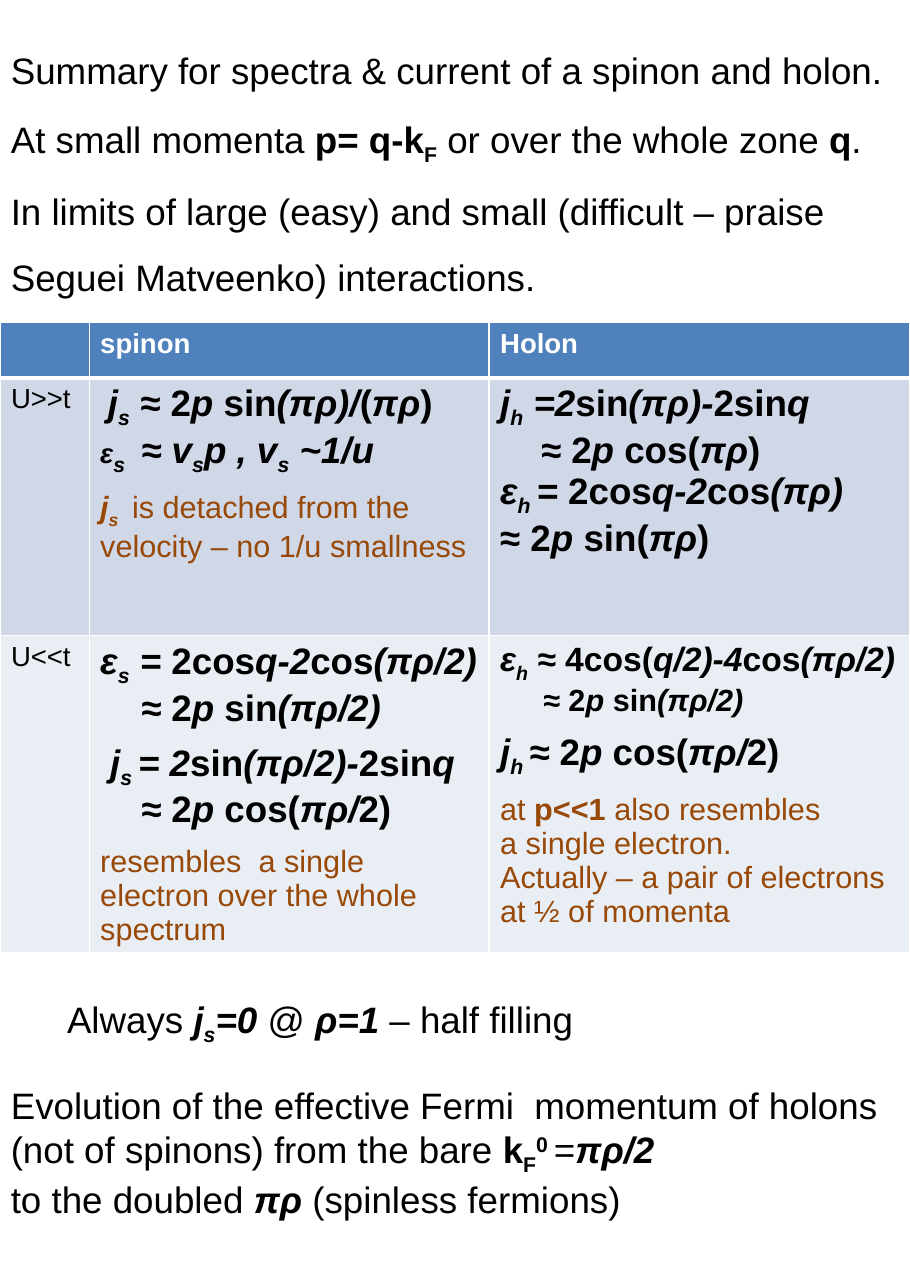
from dataclasses import dataclass

from lxml import etree
from pptx import Presentation
from pptx.dml.color import RGBColor
from pptx.enum.text import MSO_AUTO_SIZE
from pptx.oxml.ns import qn
from pptx.util import Inches, Pt

GROW = MSO_AUTO_SIZE.SHAPE_TO_FIT_TEXT
FONT = "Arial"
BLACK, WHITE, BROWN = "000000", "FFFFFF", "984807"
HEADER_FILL, BAND_FILLS = "4F81BD", ("D0D8E8", "E9EDF4")
PAGE_WIDTH, PAGE_HEIGHT = 8.26, 11.69
COLUMN_WIDTHS = (0.81, 3.63, 3.82)
ROW_HEIGHTS = (0.5, 2.34, 2.86)
BASELINES = {"{": "-25000", "}": "0", "[": "30000", "]": "0"}


@dataclass
class Line:
    """A paragraph: * toggles bold, | italic, {} is subscript, [] superscript."""
    text: str
    size: float = 24
    color: str = BLACK
    indent: float = 0
    before: float = 0
    spacing: float = 1
    first_size: float | None = None


@dataclass
class Box:
    """A text box with its place in inches."""
    left: float
    top: float
    width: float
    height: float
    lines: list[Line]
    wrap: bool = True


def label(text: str, color: str = BLACK) -> list[Line]:
    """Return a table heading."""
    return [Line(text, 18, color)]


TABLE_ROWS = [
    [[], label("*spinon", WHITE), label("*Holon", WHITE)],
    [
        label("U>>t"),
        [
            Line("*|j{s} ≈| 2|p| sin|(πρ)/|(|πρ|)", indent=0.07),
            Line("*|ε{s } ≈ v{s}p , v{s} ~1/u", first_size=18),
            Line("*|j{s }*| is detached from the velocity – no 1/u smallness", 20, BROWN, before=9),
        ],
        [
            Line("*|j{h} =2|sin|(πρ)-|2sin|q"),
            Line("*|≈| 2|p |cos(|πρ|)", indent=0.37),
            Line("*|ε{h }=| 2cos|q-2|cos|(πρ)"),
            Line("*≈ 2|p |sin(|πρ|)"),
        ],
    ],
    [
        label("U<<t"),
        [
            Line("*|ε{s} =| 2cos|q-2|cos|(πρ/2)"),
            Line("*|≈| 2|p| sin|(πρ/2)", indent=0.37),
            Line("*|j{s }= 2|sin|(πρ/2)-|2sin|q", indent=0.09, before=9),
            Line("*|≈| 2|p |cos(|πρ/|2)", indent=0.37),
            Line("resembles  a single electron over the whole spectrum", 20, BROWN, before=9),
        ],
        [
            Line("*|ε{h} ≈| 4cos(|q/2)-4|cos|(πρ/2)", 22),
            Line("*|≈| 2|p| sin|(πρ/2)", 20, indent=0.39),
            Line("*|j{h }≈| 2|p |cos(|πρ/|2)", before=9),
            Line("at *p<<1 *also resembles\na single electron.\n"
                 "Actually – a pair of electrons at ½ of momenta", 20, BROWN, before=9),
        ],
    ],
]

BOXES = [
    Box(0.51, 9, 4.95, 0.5, [Line("Always *|j{s}=0*| @ *|ρ=1 *|– half filling")], wrap=False),
    Box(0, 0.18, PAGE_WIDTH, 2.52, [
        Line("Summary for spectra & current of a spinon and holon.", spacing=1.5),
        Line("At small momenta *p= q-k{F}* or over the whole zone *q*.", spacing=1.5),
        Line("In limits of large (easy) and small (difficult – praise "
             "Seguei Matveenko) interactions.", spacing=1.5),
    ]),
    Box(0, 9.78, PAGE_WIDTH, 1.31, [
        Line("Evolution of the effective Fermi  momentum of holons (not of spinons) "
             "from the bare *k{F}[0 ]*=*|πρ/2\n*|to the doubled *|πρ *|(spinless fermions)"),
    ]),
]


def rgb(color: str) -> RGBColor:
    """Turn a hex string into a colour."""
    return RGBColor.from_string(color)


def add_span(para, text: str, *, size: float, color: str, bold: bool, italic: bool,
             baseline: str) -> None:
    """Add one formatted run."""
    span = para.add_run()
    span.text = text
    font = span.font
    font.name, font.size, font.bold, font.italic = FONT, Pt(size), bold, italic
    font.color.rgb = rgb(color)
    if baseline != "0":
        span._r.get_or_add_rPr().set("baseline", baseline)


def write_line(para, line: Line) -> None:
    """Write a marked-up line into a paragraph."""
    para.line_spacing = line.spacing
    para.space_before = Pt(line.before)
    if line.indent:
        para._p.get_or_add_pPr().set("marL", str(Inches(line.indent)))
    bold, italic, baseline, pending = False, False, "0", ""
    size = line.first_size or line.size
    for mark in line.text + "}":
        if mark not in "*|{}[]\n":
            pending += mark
            continue
        if pending:
            add_span(para, pending, size=size, color=line.color, bold=bold,
                     italic=italic, baseline=baseline)
            pending, size = "", line.size
        if mark == "\n":
            para.add_line_break()
        elif mark == "*":
            bold = not bold
        elif mark == "|":
            italic = not italic
        else:
            baseline = BASELINES[mark]


def write_lines(frame, lines: list[Line]) -> None:
    """Fill a text frame with lines."""
    for index, line in enumerate(lines):
        write_line(frame.add_paragraph() if index else frame.paragraphs[0], line)


def set_borders(cell, **widths: float) -> None:
    """Draw white cell borders, with widths in points by side."""
    properties = cell._tc.get_or_add_tcPr()
    for index, side in enumerate("LRTB"):
        edge = etree.Element(qn(f"a:ln{side}"), w=str(Pt(widths.get(side, 1))))
        fill = etree.SubElement(edge, qn("a:solidFill"))
        etree.SubElement(fill, qn("a:srgbClr"), val=WHITE)
        properties.insert(index, edge)


def add_summary_table(page) -> None:
    """Add the table of spinon and holon formulas."""
    table = page.shapes.add_table(
        len(ROW_HEIGHTS), len(COLUMN_WIDTHS), Inches(0), Inches(2.93),
        Inches(PAGE_WIDTH), Inches(sum(ROW_HEIGHTS))).table
    for column, width in zip(table.columns, COLUMN_WIDTHS):
        column.width = Inches(width)
    fills = (HEADER_FILL, *BAND_FILLS)
    for index, (row, height, fill) in enumerate(zip(table.rows, ROW_HEIGHTS, fills)):
        row.height = Inches(height)
        for cell, lines in zip(row.cells, TABLE_ROWS[index]):
            cell.fill.solid()
            cell.fill.fore_color.rgb = rgb(fill)
            set_borders(cell, T=3 if index == 1 else 1, B=3 if index == 0 else 1)
            write_lines(cell.text_frame, lines)


def add_box(page, box: Box) -> None:
    """Add a text box."""
    frame = page.shapes.add_textbox(Inches(box.left), Inches(box.top), Inches(box.width),
                                    Inches(box.height)).text_frame
    frame.word_wrap = box.wrap
    frame.auto_size = GROW
    write_lines(frame, box.lines)


def main() -> None:
    """Build and save the deck."""
    deck = Presentation()
    deck.slide_width, deck.slide_height = Inches(PAGE_WIDTH), Inches(PAGE_HEIGHT)
    page = deck.slides.add_slide(deck.slide_layouts[6])
    add_summary_table(page)
    for box in BOXES:
        add_box(page, box)
    deck.save("out.pptx")


if __name__ == "__main__":
    main()
